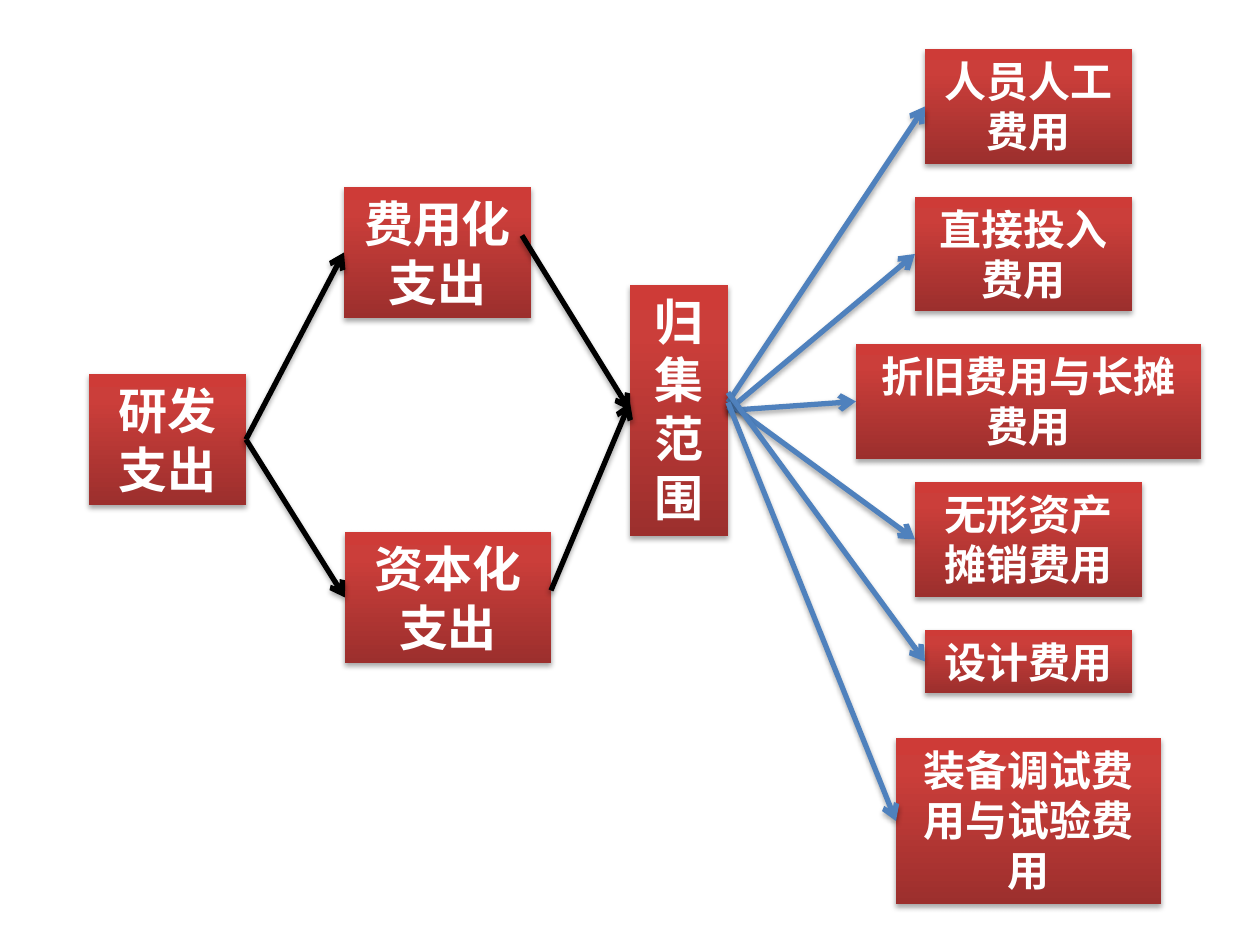
from dataclasses import dataclass

from lxml.etree import SubElement
from pptx import Presentation
from pptx.dml.color import RGBColor
from pptx.enum.shapes import MSO_CONNECTOR, MSO_SHAPE
from pptx.enum.text import MSO_ANCHOR, MSO_AUTO_SIZE, PP_ALIGN
from pptx.oxml.ns import qn
from pptx.util import Emu, Pt

EMU_PER_PX = 914400 / 126
LEFT, RIGHT = 1, 3


@dataclass(frozen=True)
class Theme:
    """Colours, font and sizes of the diagram."""
    font: str = "Noto Sans CJK JP"
    text: str = "FFFFFF"
    stage_flow: str = "000000"
    cost_flow: str = "4F81BD"
    shadow: str = "000000"
    gradient: tuple = ((0, "9C2F2D"), (80, "CB3E3A"), (100, "CE3B37"))
    stage_size: int = 28
    cost_size: int = 24
    flow_width: int = 3


THEME = Theme()

COSTS = (
    ("人员人工费用", (925, 49, 207, 115), -8),
    ("直接投入费用", (915, 197, 217, 114), 0),
    ("折旧费用与长摊费用", (856, 344, 345, 115), 0),
    ("无形资产摊销费用", (915, 482, 227, 115), -8),
    ("设计费用", (925, 630, 207, 63), -18),
    ("装备调试费用与试验费用", (896, 738, 265, 166), -8),
)


def px(length):
    """Convert pixels to EMU."""
    return Emu(round(length * EMU_PER_PX))


def add_element(parent, tag, **attributes):
    """Append a drawing element with the given attributes."""
    return SubElement(parent, qn(tag), {name: str(value) for name, value in attributes.items()})


def add_colour(parent, colour):
    """Append an RGB colour element."""
    return add_element(parent, "a:srgbClr", val=colour)


def fill_gradient(box):
    """Fill a box with the theme gradient, running upwards."""
    gradient = add_element(box._element.spPr, "a:gradFill", rotWithShape=1)
    stops = add_element(gradient, "a:gsLst")
    for percent, colour in THEME.gradient:
        add_colour(add_element(stops, "a:gs", pos=percent * 1000), colour)
    add_element(gradient, "a:lin", ang=16200000, scaled=0)


def add_shadow(properties):
    """Give shape properties a soft shadow below."""
    effects = add_element(properties, "a:effectLst")
    shadow = add_element(effects, "a:outerShdw", blurRad=Pt(3.1), dist=Pt(1.8),
                         dir=5400000, rotWithShape=0)
    add_element(add_colour(shadow, THEME.shadow), "a:alpha", val=35000)


def write_text(box, text, *, size, colour=THEME.text, bold=True, align=PP_ALIGN.CENTER):
    """Write formatted text into a box that fits its height."""
    frame = box.text_frame
    frame.word_wrap = True
    frame.auto_size = MSO_AUTO_SIZE.SHAPE_TO_FIT_TEXT
    frame.vertical_anchor = MSO_ANCHOR.TOP
    paragraph = frame.paragraphs[0]
    paragraph.alignment = align
    run = paragraph.add_run()
    run.text = text
    run.font.size = Pt(size)
    run.font.bold = bold
    run.font.color.rgb = RGBColor.from_string(colour)
    run.font.name = THEME.font
    add_element(run.font._element, "a:ea", typeface=THEME.font)


def add_box(slide, text, bounds, size=THEME.stage_size):
    """Add a red gradient box with its label."""
    box = slide.shapes.add_shape(MSO_SHAPE.RECTANGLE, *map(px, bounds))
    fill_gradient(box)
    box.line.fill.background()
    add_shadow(box._element.spPr)
    write_text(box, text, size=size)
    return box


def add_flow(slide, source, target, colour, start=(0, 0), end=(0, 0)):
    """Add an arrow between side middles, joined wherever it is not offset."""
    begin_x = source.left + source.width + px(start[0])
    begin_y = source.top + source.height // 2 + px(start[1])
    end_x = target.left + px(end[0])
    end_y = target.top + target.height // 2 + px(end[1])
    flow = slide.shapes.add_connector(MSO_CONNECTOR.STRAIGHT, begin_x, begin_y, end_x, end_y)
    if start == (0, 0):
        flow.begin_connect(source, RIGHT)
    if end == (0, 0):
        flow.end_connect(target, LEFT)
    flow.line.color.rgb = RGBColor.from_string(colour)
    flow.line.width = Pt(THEME.flow_width)
    properties = flow._element.spPr
    add_element(properties.find(qn("a:ln")), "a:tailEnd", type="arrow")
    add_shadow(properties)


def main():
    """Build the slide on research spending and its cost scope."""
    deck = Presentation()
    deck.slide_width, deck.slide_height = px(1260), px(945)
    slide = deck.slides.add_slide(deck.slide_layouts[6])

    research = add_box(slide, "研发支出", (89, 374, 157, 131))
    expensed = add_box(slide, "费用化支出", (344, 187, 187, 131))
    capitalised = add_box(slide, "资本化支出", (345, 532, 206, 131))
    scope = add_box(slide, "归集范围", (630, 285, 98, 251))

    for spending in (expensed, capitalised):
        add_flow(slide, research, spending, THEME.stage_flow)
    add_flow(slide, expensed, scope, THEME.stage_flow, start=(-9, -17))
    add_flow(slide, capitalised, scope, THEME.stage_flow, start=(0, -7), end=(0, -8))

    for label, bounds, start_offset in COSTS:
        cost = add_box(slide, label, bounds, THEME.cost_size)
        add_flow(slide, scope, cost, THEME.cost_flow, start=(0, start_offset))

    deck.save("out.pptx")


if __name__ == "__main__":
    main()
